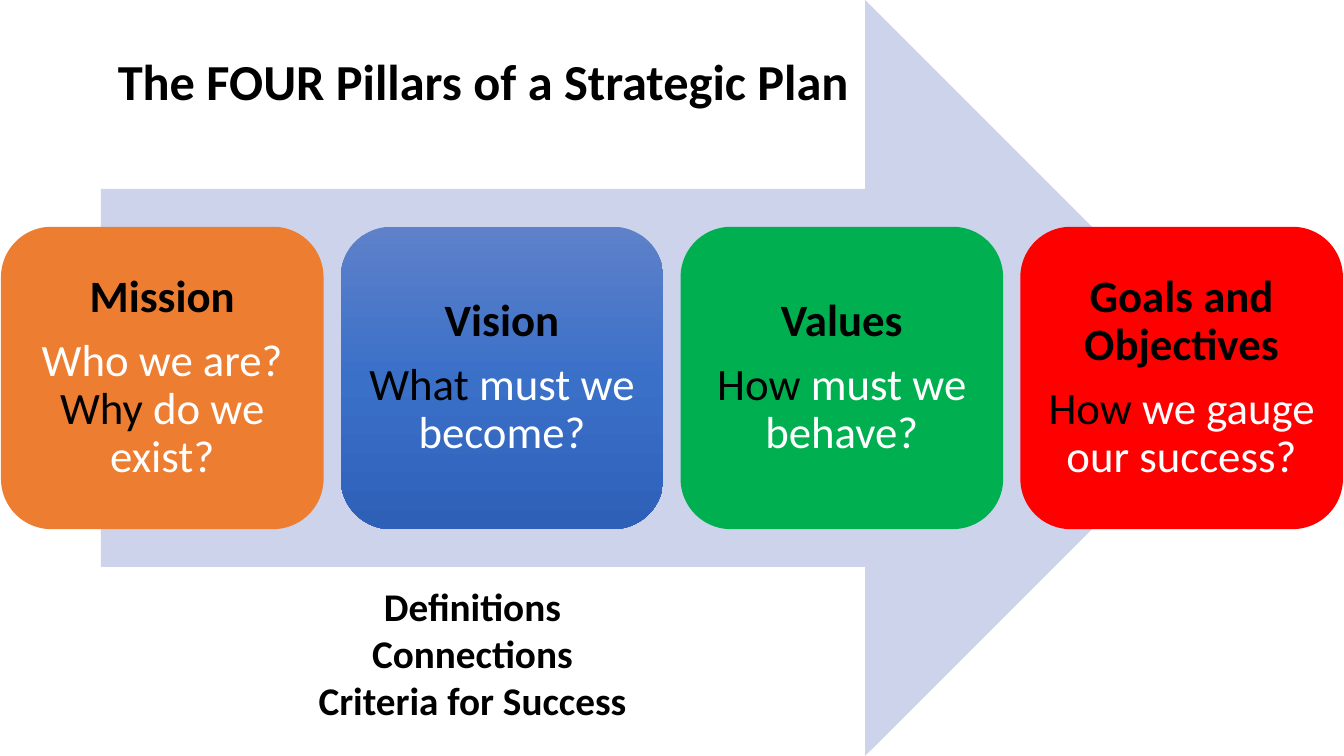
import copy
from dataclasses import dataclass

import pptx
import pptx.dml.color
import pptx.enum.shapes
import pptx.enum.text
import pptx.shapes.autoshape
import pptx.slide
import pptx.text.text
import pptx.util
from pptx.util import Inches

COLORS = {
    "arrow": "CCD3EA",
    "orange": "ED7D31",
    "green": "00B050",
    "red": "FF0000",
    "black": "000000",
    "white": "FFFFFF",
}
VISION_GRADIENT = ["5E81C9", "3B70C9", "2E60B8"]
FONT_NAME = "Calibri"

PILLAR_LEFT, PILLAR_TOP = 0.01, 2.25
PILLAR_WIDTH, PILLAR_HEIGHT = 3.2, 3.0
PILLAR_PITCH = 3.37


@dataclass(frozen=True)
class Pillar:
    """One box; the question is a list of (text, color name) pieces."""
    name: str
    question: list[tuple[str, str]]
    fill: list[str]


@dataclass(frozen=True)
class Label:
    lines: list[str]
    left: float
    top: float
    width: float
    height: float
    size: int
    alignment: pptx.enum.text.PP_ALIGN


PILLARS = [
    Pillar("Mission",
           [("Who we are? ", "white"), ("Why", "black"), (" do we exist?", "white")],
           [COLORS["orange"]]),
    Pillar("Vision", [("What", "black"), (" must we become?", "white")], VISION_GRADIENT),
    Pillar("Values", [("How", "black"), (" must we behave?", "white")], [COLORS["green"]]),
    Pillar("Goals and Objectives",
           [("How", "black"), (" we gauge our success?", "white")],
           [COLORS["red"]]),
]

LABELS = [
    Label(["Definitions", "Connections", "Criteria for Success"],
          3.04, 5.73, 3.29, 1.51, 28, pptx.enum.text.PP_ALIGN.CENTER),
    Label(["The FOUR Pillars of a Strategic Plan"],
          1.07, 0.45, 7.56, 0.71, 36, pptx.enum.text.PP_ALIGN.LEFT),
]


def rgb(value: str) -> pptx.dml.color.RGBColor:
    return pptx.dml.color.RGBColor.from_string(value)


def fill_shape(shape: pptx.shapes.autoshape.Shape, colors: list[str]) -> None:
    """Fill with one color, or with three as a gradient from top to bottom."""
    shape.shadow.inherit = False
    shape.line.fill.background()
    if len(colors) == 1:
        shape.fill.solid()
        shape.fill.fore_color.rgb = rgb(colors[0])
        return
    shape.fill.gradient()
    shape.fill.gradient_angle = 270
    stop_list = shape._element.spPr.find(".//" + pptx.oxml.ns.qn("a:gsLst"))
    stop_list.insert(1, copy.deepcopy(stop_list[0]))
    for index, (stop, color) in enumerate(zip(shape.fill.gradient_stops, colors)):
        stop.position = index / (len(colors) - 1)
        stop.color.rgb = rgb(color)


def format_paragraph(paragraph: pptx.text.text._Paragraph, size: int, bold: bool,
                     alignment: pptx.enum.text.PP_ALIGN) -> None:
    paragraph.alignment = alignment
    paragraph.font.name = FONT_NAME
    paragraph.font.size = pptx.util.Pt(size)
    paragraph.font.bold = bold


def add_colored_run(paragraph: pptx.text.text._Paragraph, text: str, color: str) -> None:
    run = paragraph.add_run()
    run.text = text
    run.font.color.rgb = rgb(COLORS[color])


def add_arrow(slide: pptx.slide.Slide) -> None:
    arrow = slide.shapes.add_shape(
        pptx.enum.shapes.MSO_SHAPE.RIGHT_ARROW,
        Inches(1), Inches(0), Inches(11.33), Inches(7.5))
    fill_shape(arrow, [COLORS["arrow"]])


def add_pillar(slide: pptx.slide.Slide, pillar: Pillar, index: int) -> None:
    box = slide.shapes.add_shape(
        pptx.enum.shapes.MSO_SHAPE.ROUNDED_RECTANGLE,
        Inches(PILLAR_LEFT + index * PILLAR_PITCH), Inches(PILLAR_TOP),
        Inches(PILLAR_WIDTH), Inches(PILLAR_HEIGHT))
    fill_shape(box, pillar.fill)
    frame = box.text_frame
    frame.word_wrap = True
    frame.vertical_anchor = pptx.enum.text.MSO_ANCHOR.MIDDLE
    frame.margin_left = frame.margin_right = Inches(0.13)
    frame.margin_top = frame.margin_bottom = Inches(0.13)

    heading, question = frame.paragraphs[0], frame.add_paragraph()
    for paragraph, pieces, bold in (
        (heading, [(pillar.name, "black")], True),
        (question, pillar.question, False),
    ):
        format_paragraph(paragraph, 32, bold, pptx.enum.text.PP_ALIGN.CENTER)
        paragraph.line_spacing = 0.9
        for text, color in pieces:
            add_colored_run(paragraph, text, color)
    question.space_before = pptx.util.Pt(11.2)


def add_label(slide: pptx.slide.Slide, label: Label) -> None:
    frame = slide.shapes.add_textbox(
        Inches(label.left), Inches(label.top),
        Inches(label.width), Inches(label.height)).text_frame
    frame.word_wrap = True
    for index, line in enumerate(label.lines):
        paragraph = frame.add_paragraph() if index else frame.paragraphs[0]
        paragraph.text = line
        format_paragraph(paragraph, label.size, True, label.alignment)
        paragraph.font.color.rgb = rgb(COLORS["black"])


def main() -> None:
    presentation = pptx.Presentation()
    presentation.slide_width = Inches(13.33)
    presentation.slide_height = Inches(7.5)
    slide = presentation.slides.add_slide(presentation.slide_layouts[6])
    add_arrow(slide)
    for index, pillar in enumerate(PILLARS):
        add_pillar(slide, pillar, index)
    for label in LABELS:
        add_label(slide, label)
    presentation.save("out.pptx")


if __name__ == "__main__":
    main()
